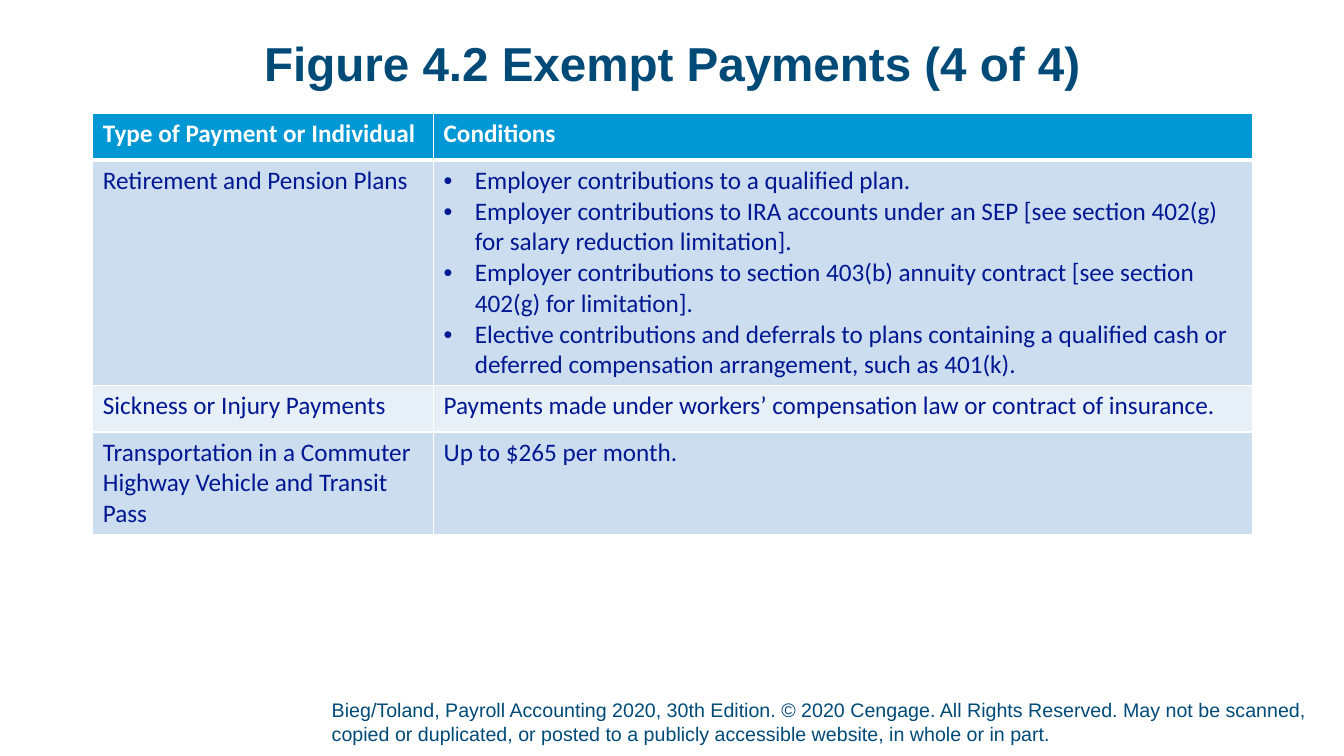
from lxml import etree
from pptx import Presentation
from pptx.dml.color import RGBColor
from pptx.enum.text import MSO_ANCHOR, MSO_AUTO_SIZE, PP_ALIGN
from pptx.oxml.ns import qn
from pptx.util import Inches, Pt

TOP, BOTTOM = MSO_ANCHOR.TOP, MSO_ANCHOR.BOTTOM
NO_AUTOSIZE = MSO_AUTO_SIZE.NONE
LEFT, CENTER = PP_ALIGN.LEFT, PP_ALIGN.CENTER
NAVY, BLUE, INK, WHITE = "004A78", "0098D4", "011892", "FFFFFF"
DARK_BAND, LIGHT_BAND = "CCDDEF", "E7EFF7"


def color(value):
    return RGBColor.from_string(value)


def write(frame, text, font="Calibri", size=18, ink=INK, bold=False,
          align=LEFT, spacing=None, bullet=False):
    frame.word_wrap = True
    frame.text = text
    for para in frame.paragraphs:
        if bullet:
            properties = para._p.get_or_add_pPr()
            properties.set("marL", str(Inches(0.31)))
            properties.set("indent", str(Inches(-0.31)))
            etree.SubElement(properties, qn("a:buFont"), typeface="Arial")
            etree.SubElement(properties, qn("a:buChar"), char="•")
        para.alignment = align
        if spacing:
            para.line_spacing = spacing
        for span in para.runs:
            span.font.name = font
            span.font.size = Pt(size)
            span.font.bold = bold
            span.font.color.rgb = color(ink)


deck = Presentation()
deck.slide_width, deck.slide_height = Inches(13.33), Inches(7.5)
page = deck.slides.add_slide(deck.slide_layouts[5])

title = page.shapes.title
title.left, title.top = Inches(0.92), Inches(0.4)
title.width, title.height = Inches(11.5), Inches(0.74)

notice = page.shapes.add_textbox(Inches(3.29), Inches(6.92), Inches(9.79), Inches(0.52))

for box, anchor, bottom in ((title, TOP, 0), (notice, BOTTOM, 0.05)):
    frame = box.text_frame
    frame.margin_left = frame.margin_right = frame.margin_top = 0
    frame.margin_bottom = Inches(bottom)
    frame.vertical_anchor = anchor
    frame.auto_size = NO_AUTOSIZE

write(title.text_frame, "Figure 4.2 Exempt Payments (4 of 4)", font="Arial",
      size=34, ink=NAVY, bold=True, align=CENTER, spacing=0.9)
write(notice.text_frame,
      "Bieg/Toland, Payroll Accounting 2020, 30th Edition. © 2020 Cengage. "
      "All Rights Reserved. May not be scanned, copied or duplicated, or posted "
      "to a publicly accessible website, in whole or in part.",
      font="Arial", size=14, ink=NAVY)

retirement_conditions = "\n".join([
    "Employer contributions to a qualified plan.",
    "Employer contributions to IRA accounts under an SEP "
    "[see section 402(g) for salary reduction limitation].",
    "Employer contributions to section 403(b) annuity contract "
    "[see section 402(g) for limitation].",
    "Elective contributions and deferrals to plans containing a qualified cash "
    "or deferred compensation arrangement, such as 401(k).",
])
payments = [
    (0.46, "Type of Payment or Individual", "Conditions"),
    (2.2, "Retirement and Pension Plans", retirement_conditions),
    (0.46, "Sickness or Injury Payments",
     "Payments made under workers’ compensation law or contract of insurance."),
    (0.99, "Transportation in a Commuter Highway Vehicle and Transit Pass",
     "Up to $265 per month."),
]

table = page.shapes.add_table(len(payments), 2, Inches(0.92), Inches(1.13),
                              Inches(11.5), Inches(4.11)).table
for column, width in zip(table.columns, (3.38, 8.12)):
    column.width = Inches(width)

for row, (height, *texts) in enumerate(payments):
    table.rows[row].height = Inches(height)
    header = row == 0
    band = BLUE if header else DARK_BAND if row % 2 else LIGHT_BAND
    for column, text in enumerate(texts):
        cell = table.cell(row, column)
        write(cell.text_frame, text, ink=WHITE if header else INK,
              bold=header, bullet="\n" in text)
        cell_properties = cell._tc.get_or_add_tcPr()
        for side in ("lnL", "lnR", "lnT", "lnB"):
            thick = (side, row) in (("lnB", 0), ("lnT", 1))
            border = etree.SubElement(cell_properties, qn(f"a:{side}"),
                                      w=str(Pt(3 if thick else 1)))
            fill = etree.SubElement(border, qn("a:solidFill"))
            etree.SubElement(fill, qn("a:srgbClr"), val=WHITE)
        cell.fill.solid()
        cell.fill.fore_color.rgb = color(band)

deck.save("out.pptx")
